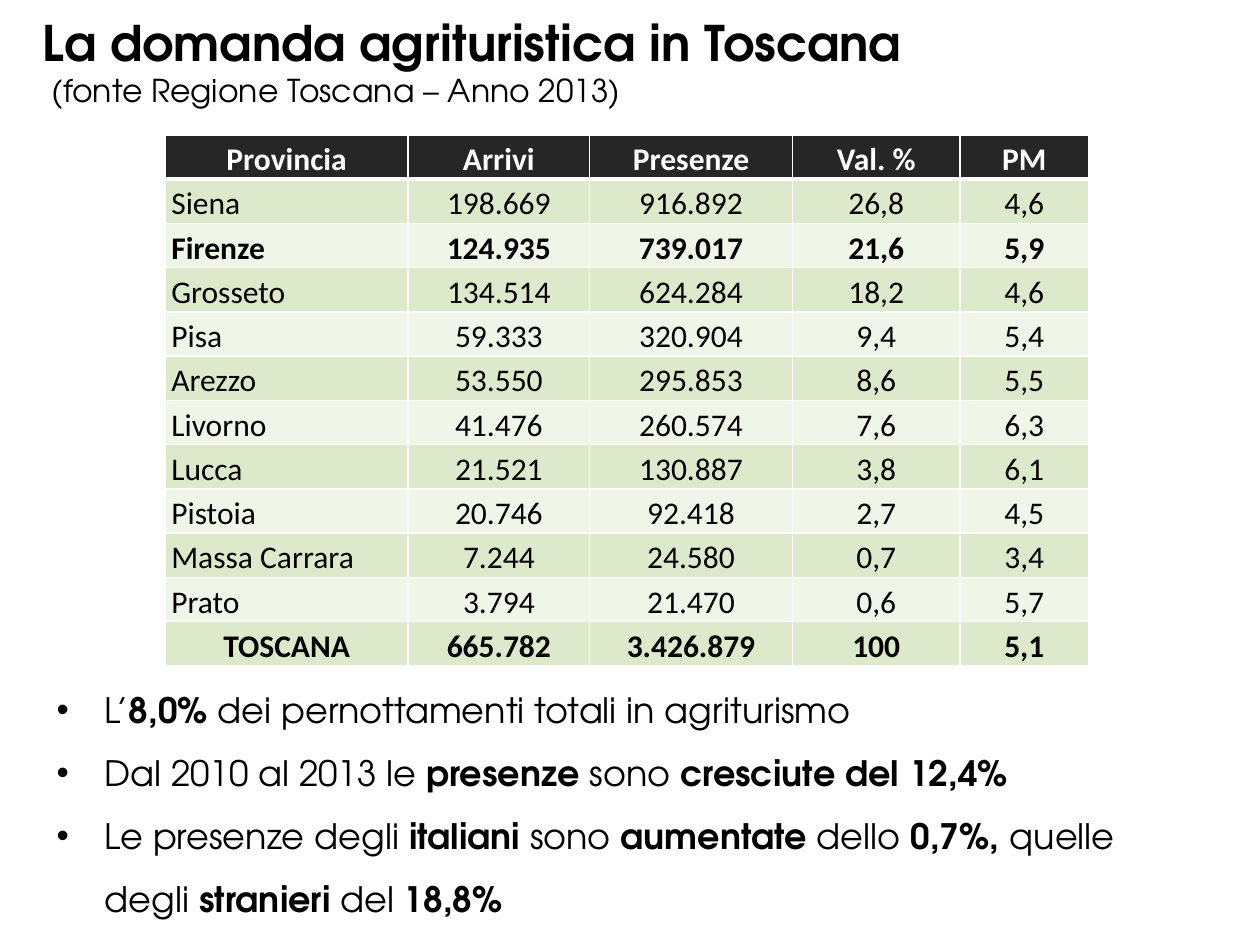
from dataclasses import dataclass

from lxml import etree
from pptx import Presentation
from pptx.dml.color import RGBColor
from pptx.enum import text
from pptx.oxml import ns
from pptx.util import Inches, Pt


@dataclass(frozen=True)
class Theme:
    """Colours, fonts and type sizes of the slide."""
    ink: str = "000000"
    white: str = "FFFFFF"
    header: str = "262626"
    band_dark: str = "DCEACB"
    band_light: str = "EFF5E7"
    display_font: str = "TeX Gyre Adventor"
    table_font: str = "Calibri"
    title_size: int = 28
    bullet_size: int = 20
    small_size: int = 18


THEME = Theme()
COLUMN_WIDTHS = (1.93, 1.44, 1.61, 1.33, 1.02)
TABLE_ROWS = (
    ("Provincia", "Arrivi", "Presenze", "Val. %", "PM"),
    ("Siena", "198.669", "916.892", "26,8", "4,6"),
    ("Firenze", "124.935", "739.017", "21,6", "5,9"),
    ("Grosseto", "134.514", "624.284", "18,2", "4,6"),
    ("Pisa", "59.333", "320.904", "9,4", "5,4"),
    ("Arezzo", "53.550", "295.853", "8,6", "5,5"),
    ("Livorno", "41.476", "260.574", "7,6", "6,3"),
    ("Lucca", "21.521", "130.887", "3,8", "6,1"),
    ("Pistoia", "20.746", "92.418", "2,7", "4,5"),
    ("Massa Carrara", "7.244", "24.580", "0,7", "3,4"),
    ("Prato", "3.794", "21.470", "0,6", "5,7"),
    ("TOSCANA", "665.782", "3.426.879", "100", "5,1"),
)
BOLD_ROWS = ("Provincia", "Firenze", "TOSCANA")
CENTRED_LABELS = ("Provincia", "TOSCANA")
BULLETS = (
    "L’*8,0% *dei pernottamenti totali in agriturismo",
    "Dal 2010 al 2013 le *presenze* sono *cresciute del 12,4%*",
    "Le presenze degli *italiani* sono *aumentate* dello *0,7%, *"
    "quelle degli *stranieri* del *18,8%*",
)


def write_paragraph(paragraph, marked_text, name, size, color=THEME.ink):
    """Fill a paragraph, setting the parts between asterisks in bold."""
    for index, part in enumerate(marked_text.split("*")):
        if part:
            run = paragraph.add_run()
            run.text = part
            run.font.bold = index % 2 == 1
    for font in (paragraph.font, *(run.font for run in paragraph.runs)):
        font.name = name
        font.size = Pt(size)
        font.color.rgb = RGBColor.from_string(color)


def add_text_frame(slide, box):
    """Add a wrapping text box and return its text frame."""
    frame = slide.shapes.add_textbox(*map(Inches, box)).text_frame
    frame.word_wrap = True
    frame.auto_size = text.MSO_AUTO_SIZE.SHAPE_TO_FIT_TEXT
    return frame


def add_heading(slide, box):
    """Place the title and its source line."""
    frame = add_text_frame(slide, box)
    write_paragraph(frame.paragraphs[0], "*La domanda agrituristica in Toscana*",
                    THEME.display_font, THEME.title_size)
    write_paragraph(frame.add_paragraph(), "* *(fonte Regione Toscana – Anno 2013)",
                    THEME.display_font, THEME.small_size)


def set_borders(cell, top, bottom):
    """Draw white cell borders, with the given top and bottom widths."""
    properties = cell._tc.get_or_add_tcPr()
    for side, width in (("L", 1), ("R", 1), ("T", top), ("B", bottom)):
        line = etree.SubElement(properties, ns.qn(f"a:ln{side}"), w=str(Pt(width)))
        fill = etree.SubElement(line, ns.qn("a:solidFill"))
        etree.SubElement(fill, ns.qn("a:srgbClr"), val=THEME.white)


def style_cell(cell, row_index):
    """Set the borders, fill, margins and anchor of a cell."""
    set_borders(cell, 3 if row_index == 1 else 1, 3 if row_index == 0 else 1)
    band = THEME.band_dark if row_index % 2 else THEME.band_light
    cell.fill.solid()
    cell.fill.fore_color.rgb = RGBColor.from_string(band if row_index else THEME.header)
    cell.margin_left = cell.margin_right = Inches(0.05)
    cell.margin_top = cell.margin_bottom = 0
    cell.vertical_anchor = text.MSO_ANCHOR.MIDDLE


def add_province_table(slide, box):
    """Place the table of arrivals and stays by province."""
    table = slide.shapes.add_table(
        len(TABLE_ROWS), len(COLUMN_WIDTHS), *map(Inches, box)).table
    table.horz_banding = False
    for column, width in zip(table.columns, COLUMN_WIDTHS):
        column.width = Inches(width)
    for row_index, values in enumerate(TABLE_ROWS):
        label = values[0]
        color = THEME.ink if row_index else THEME.white
        for column_index, value in enumerate(values):
            cell = table.cell(row_index, column_index)
            style_cell(cell, row_index)
            paragraph = cell.text_frame.paragraphs[0]
            centred = column_index > 0 or label in CENTRED_LABELS
            paragraph.alignment = text.PP_ALIGN.CENTER if centred else text.PP_ALIGN.LEFT
            paragraph.line_spacing = 1.15
            marked_text = f"*{value}*" if label in BOLD_ROWS else value
            write_paragraph(paragraph, marked_text, THEME.table_font, THEME.small_size, color)


def add_bullets(slide, box):
    """Place the bulleted findings."""
    frame = add_text_frame(slide, box)
    for index, finding in enumerate(BULLETS):
        paragraph = frame.add_paragraph() if index else frame.paragraphs[0]
        paragraph.line_spacing = 1.5
        properties = paragraph._p.get_or_add_pPr()
        properties.set("marL", str(Inches(0.38)))
        properties.set("indent", str(-Inches(0.38)))
        etree.SubElement(properties, ns.qn("a:buFont"), typeface="Arial")
        etree.SubElement(properties, ns.qn("a:buChar"), char="•")
        write_paragraph(paragraph, finding, THEME.display_font, THEME.bullet_size)


def main():
    """Build and save the presentation."""
    presentation = Presentation()
    presentation.slide_width = Inches(10)
    presentation.slide_height = Inches(7.5)
    slide = presentation.slides.add_slide(presentation.slide_layouts[6])
    add_province_table(slide, (1.31, 1.07, 7.32, 4.14))
    add_bullets(slide, (0.35, 5.25, 9.21, 2.12))
    add_heading(slide, (0.24, 0.05, 7.68, 0.88))
    presentation.save("out.pptx")


if __name__ == "__main__":
    main()
